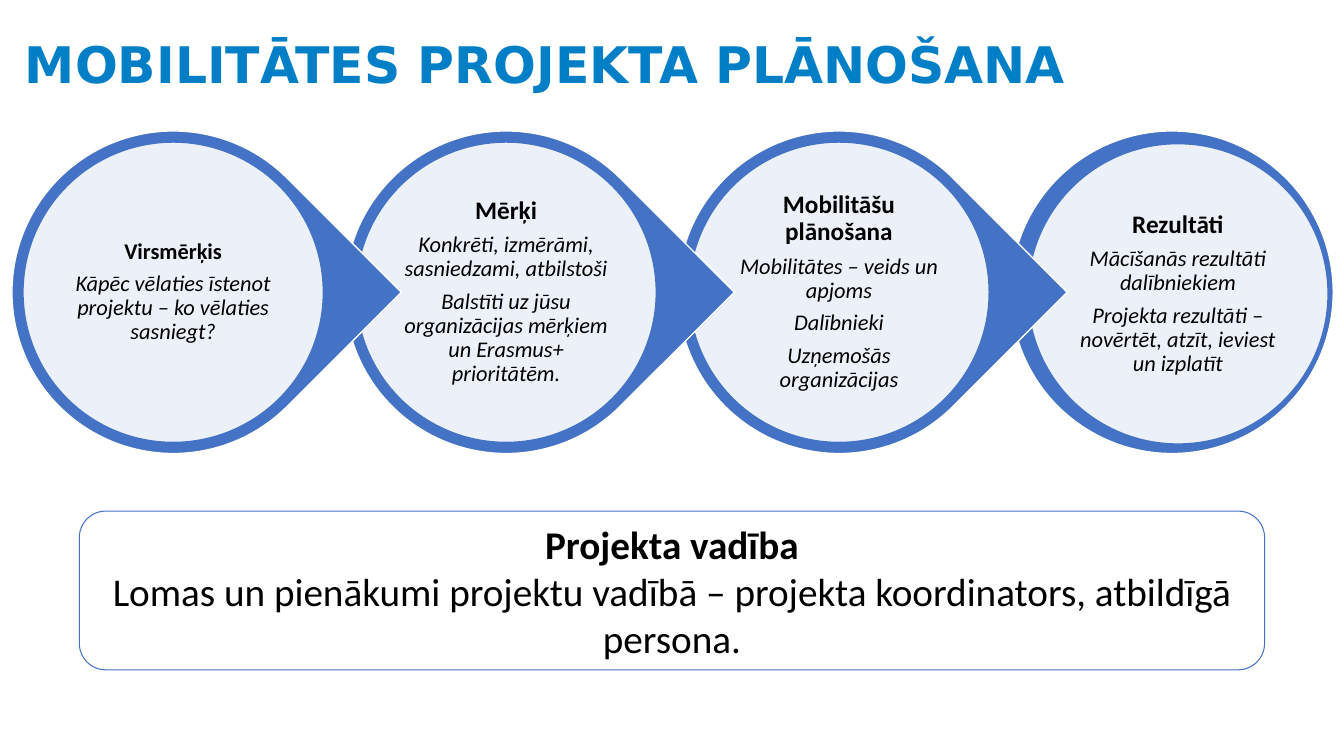
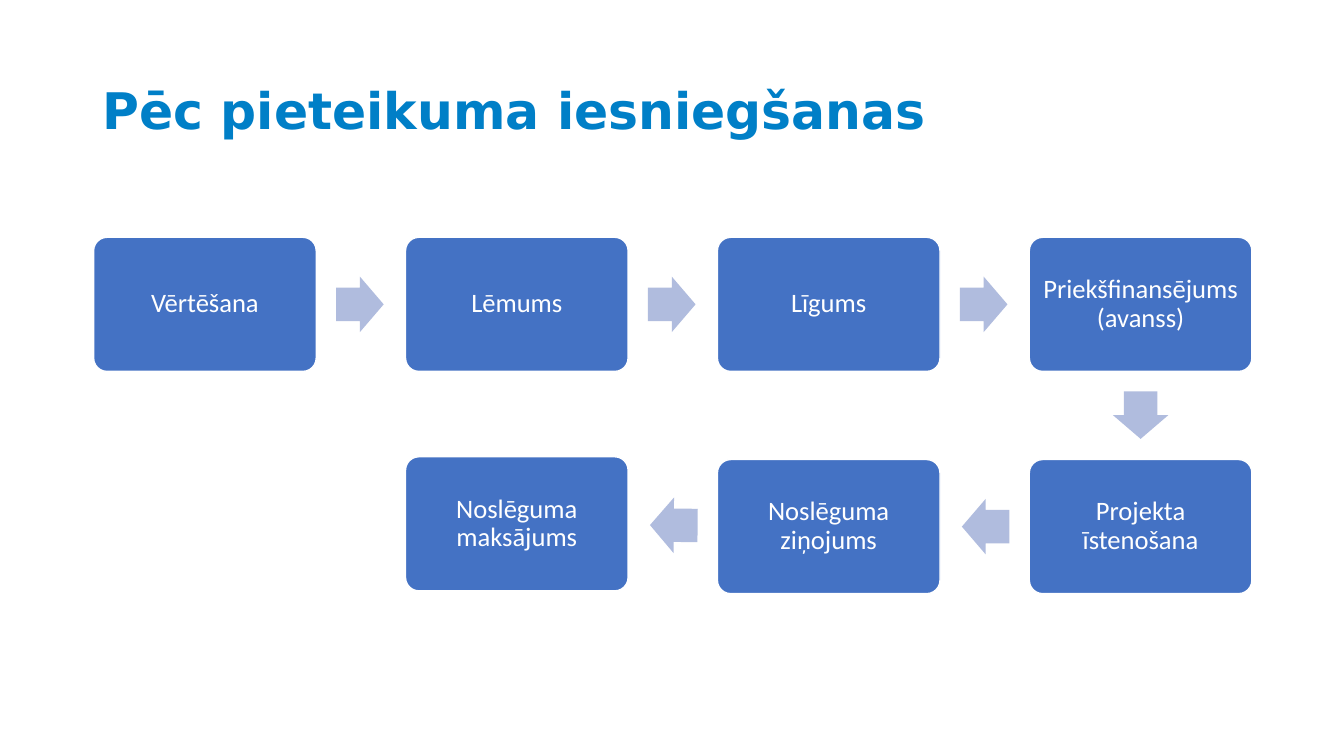
from math import atan2, degrees, hypot

from lxml.etree import SubElement
from pptx import Presentation
from pptx.dml.color import RGBColor
from pptx.enum.shapes import MSO_SHAPE as Preset
from pptx.enum.text import MSO_ANCHOR as Anchor, PP_ALIGN as Align
from pptx.oxml.ns import qn
from pptx.util import Cm, Pt

COLOURS = {
    "title": "007FC7",
    "blue": "4472C4",
    "arrow": "B0BCDE",
    "white": "FFFFFF",
    "black": "000000",
}
TITLE_FONT = "DejaVu Sans"
BODY_FONT = "Calibri"
PAGE_SIZE = (33.87, 19.05)


def colour(name):
    return RGBColor.from_string(COLOURS[name])


def add_text(frame, text, size=16, font=BODY_FONT, ink="black", bold=False,
             italic=False, align=Align.CENTER, leading=0.9, after=0):
    """Write one paragraph, filling the empty first one before adding more."""
    para = frame.paragraphs[0]
    if para.runs:
        para = frame.add_paragraph()
    para.alignment = align
    para.line_spacing = leading
    para.space_after = Pt(after)
    span = para.add_run()
    span.text = text
    span.font.name = font
    span.font.size = Pt(size)
    span.font.bold = bold
    span.font.italic = italic
    span.font.color.rgb = colour(ink)


def set_frame(shape, inset=None):
    frame = shape.text_frame
    frame.word_wrap = True
    frame.vertical_anchor = Anchor.MIDDLE
    if inset is not None:
        frame.margin_left = frame.margin_right = Cm(inset)
        frame.margin_top = frame.margin_bottom = Cm(inset)
    return frame


def add_preset(page, preset, box, fill=None, line=None, width=1, opacity=None):
    shape = page.shapes.add_shape(preset, *map(Cm, box))
    shape.shadow.inherit = False
    if fill:
        shape.fill.solid()
        shape.fill.fore_color.rgb = colour(fill)
    else:
        shape.fill.background()
    if opacity:
        tone = shape.fill._xPr.find(qn("a:solidFill"))[0]
        SubElement(tone, qn("a:alpha"), val=str(opacity * 1000))
    if line:
        shape.line.color.rgb = colour(line)
        shape.line.width = Pt(width)
    else:
        shape.line.fill.background()
    return shape


def add_page(deck, title, title_box):
    page = deck.slides.add_slide(deck.slide_layouts[6])
    frame = set_frame(page.shapes.add_textbox(*map(Cm, title_box)))
    add_text(frame, title, size=36, font=TITLE_FONT, ink="title", bold=True,
             align=Align.LEFT)
    return page


# Planning stages: overlapping drops, each with a pale disc
STAGES = [
    ("Virsmērķis", 16, ["Kāpēc vēlaties īstenot projektu – ko vēlaties sasniegt?"]),
    ("Mērķi", 18, [
        "Konkrēti, izmērāmi, sasniedzami, atbilstoši",
        "Balstīti uz jūsu organizācijas mērķiem un Erasmus+ prioritātēm.",
    ]),
    ("Mobilitāšu plānošana", 18, [
        "Mobilitātes – veids un apjoms",
        "Dalībnieki",
        "Uzņemošās organizācijas",
    ]),
    ("Rezultāti", 18, [
        "Mācīšanās rezultāti dalībniekiem",
        "Projekta rezultāti – novērtēt, atzīt, ieviest un izplatīt",
    ]),
]


def add_stage(page, box, stage, is_last):
    left, top, size, _ = box
    heading, heading_size, details = stage
    drop = add_preset(page, Preset.OVAL if is_last else Preset.TEAR, box,
                      fill="blue", line="white")
    if not is_last:
        drop.rotation = 45
    disc_size = 7.57
    inset = (size - disc_size) / 2
    nudge_x, nudge_y = (0.15, 0.04) if is_last else (0, 0)
    disc = add_preset(
        page, Preset.OVAL,
        (left + inset + nudge_x, top + inset + nudge_y, disc_size, disc_size),
        fill="white", line="blue", opacity=90)
    frame = set_frame(disc, inset=0.05)
    add_text(frame, heading, size=heading_size, bold=True, after=6)
    for detail in details:
        add_text(frame, detail, italic=True, after=6)


def add_stage_row(page, left, top):
    size, pitch = 8.13, 8.39
    last = len(STAGES) - 1
    # The rightmost goes first so that each tip overlaps the next stage
    for index in range(last, -1, -1):
        add_stage(page, (left + index * pitch, top, size, size),
                  STAGES[index], index == last)


def add_management_panel(page, box):
    panel = add_preset(page, Preset.ROUNDED_RECTANGLE, box, line="blue", width=0.75)
    frame = set_frame(panel)
    add_text(frame, "Projekta vadība", size=28, bold=True, leading=1)
    add_text(frame, "Lomas un pienākumi projektu vadībā – projekta koordinators, "
             "atbildīgā persona.", size=28, leading=1)


# Process steps: text, column, row, vertical shift
STEPS = [
    ("Vērtēšana", 0, 0, 0),
    ("Lēmums", 1, 0, 0),
    ("Līgums", 2, 0, 0),
    ("Priekšfinansējums (avanss)", 3, 0, 0),
    ("Projekta īstenošana", 3, 1, 0),
    ("Noslēguma ziņojums", 2, 1, 0),
    ("Noslēguma maksājums", 1, 1, -0.07),
]


def add_step(page, box, text):
    step = add_preset(page, Preset.ROUNDED_RECTANGLE, box, fill="blue", line="white")
    step.adjustments[0] = 0.1
    add_text(set_frame(step, inset=0.19), text, size=19, ink="white")


def add_step_arrow(page, start, end):
    """Place a block arrow just past the start box, pointing at the end box."""
    left, top, width, height = start
    length, breadth, gap = 1.2, 1.4, 0.5
    run, rise = end[0] - left, end[1] - top
    half = width / 2 if abs(run) > abs(rise) else height / 2
    reach = (half + gap + length / 2) / hypot(run, rise)
    middle_x = left + width / 2 + run * reach
    middle_y = top + height / 2 + rise * reach
    arrow = add_preset(
        page, Preset.RIGHT_ARROW,
        (middle_x - length / 2, middle_y - breadth / 2, length, breadth),
        fill="arrow")
    arrow.adjustments[0] = 0.6
    arrow.adjustments[1] = 0.5
    arrow.rotation = degrees(atan2(rise, run)) % 360


def add_process(page, left, top):
    width, height = 5.61, 3.38
    column_pitch, row_pitch = 7.86, 5.6
    boxes = [(left + column * column_pitch, top + row * row_pitch + shift,
              width, height) for _, column, row, shift in STEPS]
    for box, step in zip(boxes, STEPS):
        add_step(page, box, step[0])
    for start, end in zip(boxes, boxes[1:]):
        add_step_arrow(page, start, end)


def build_planning_page(deck):
    page = add_page(deck, "MOBILITĀTES PROJEKTA PLĀNOŠANA", (0.38, 0.5, 32.87, 2.41))
    add_stage_row(page, 0.3, 3.3)
    add_management_panel(page, (2, 12.88, 29.87, 4))


def build_follow_up_page(deck):
    page = add_page(deck, "Pēc pieteikuma iesniegšanas", (2.33, 1.01, 29.21, 3.68))
    add_process(page, 2.36, 5.98)


def main():
    deck = Presentation()
    deck.slide_width, deck.slide_height = map(Cm, PAGE_SIZE)
    build_planning_page(deck)
    build_follow_up_page(deck)
    deck.save("out.pptx")


if __name__ == "__main__":
    main()
